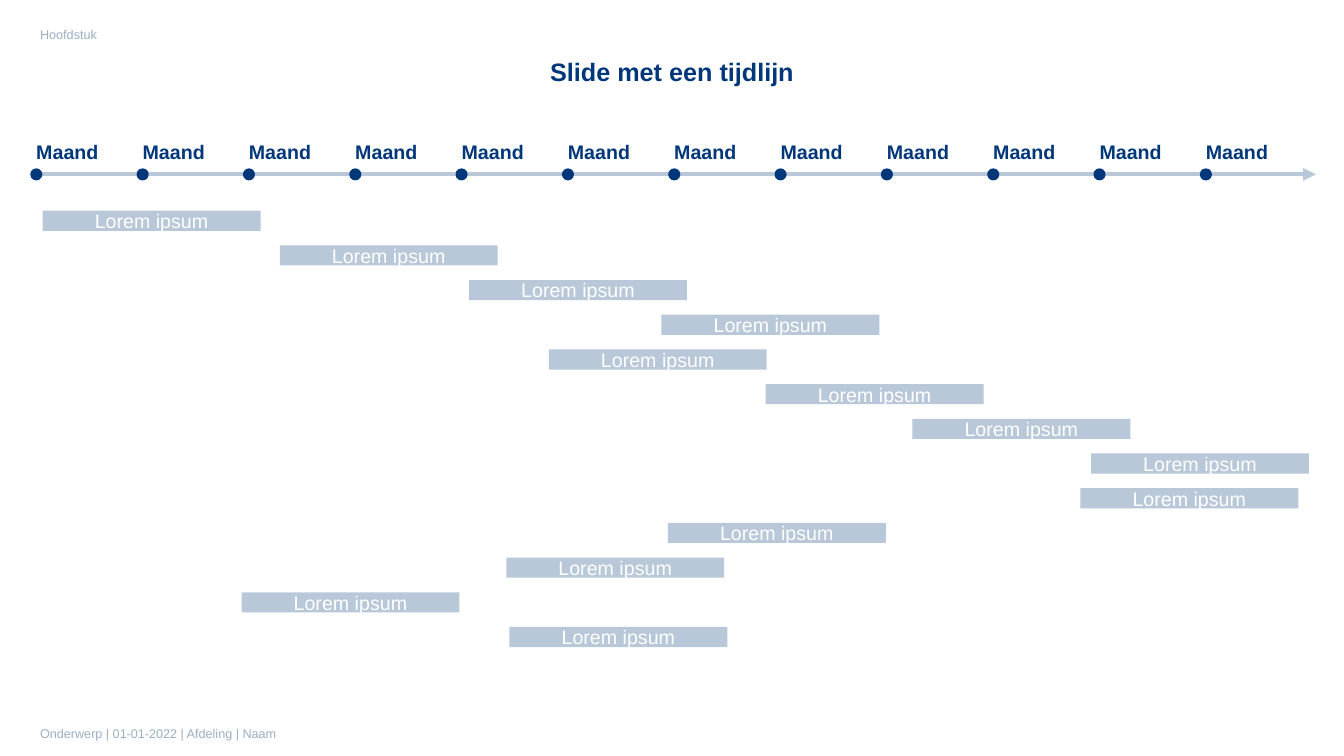
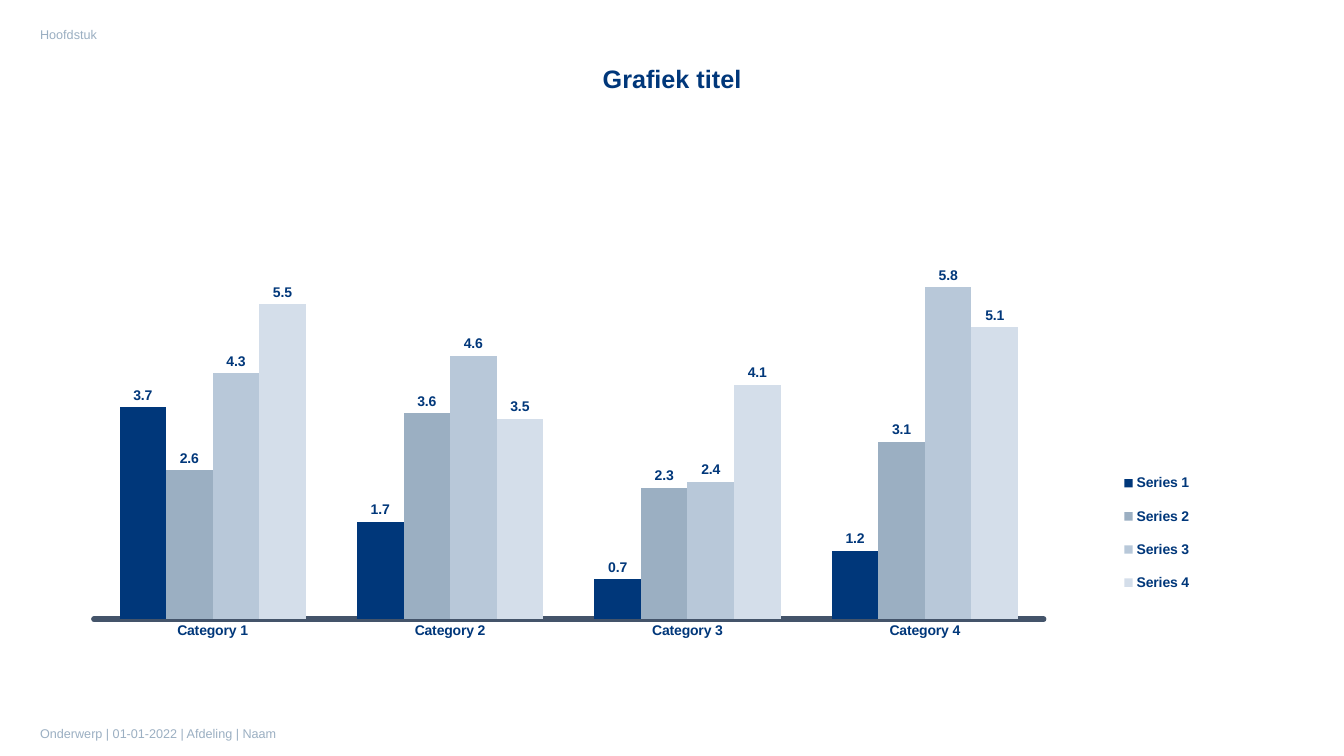
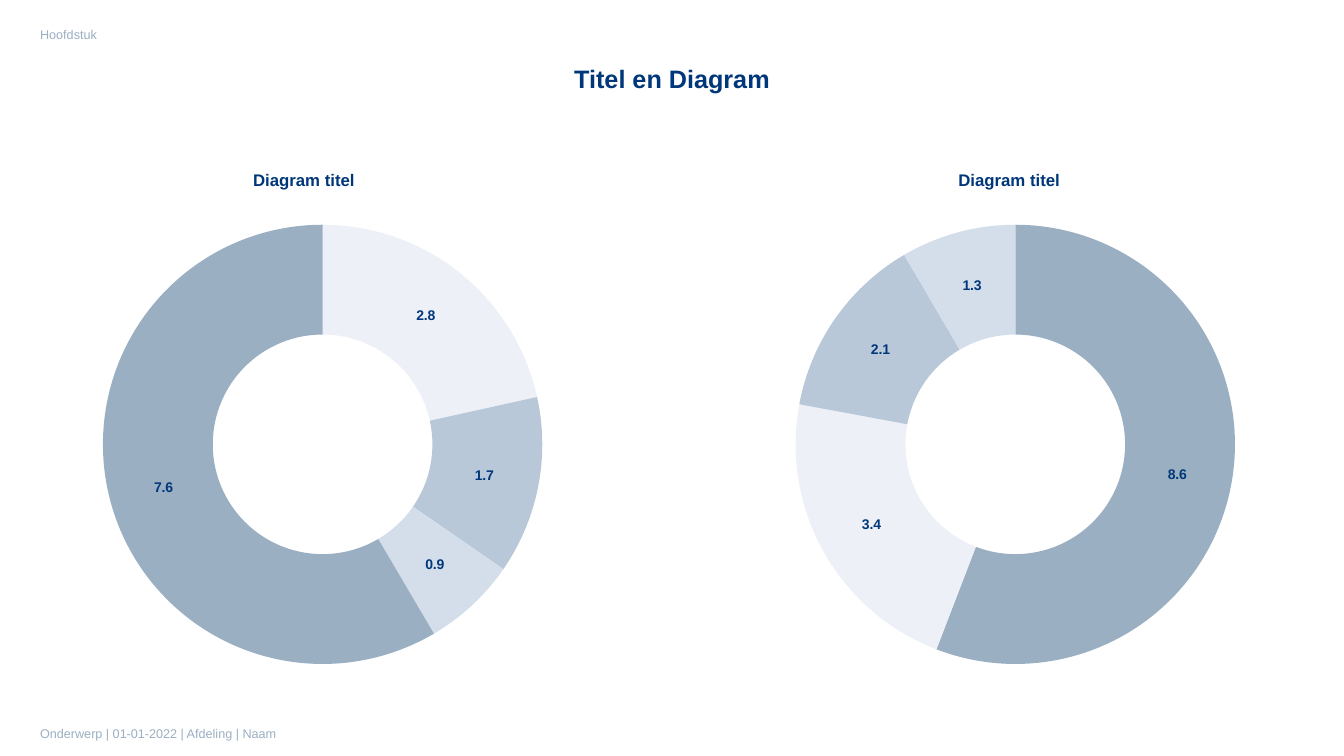
from dataclasses import dataclass

from lxml.etree import SubElement
from pptx import Presentation
from pptx.chart.chart import Chart
from pptx.chart.data import CategoryChartData
from pptx.dml.color import RGBColor
from pptx.enum.chart import XL_CHART_TYPE, XL_LABEL_POSITION, XL_LEGEND_POSITION, XL_TICK_MARK
from pptx.enum.shapes import MSO_CONNECTOR, MSO_SHAPE
from pptx.enum.text import MSO_ANCHOR, MSO_AUTO_SIZE, PP_ALIGN
from pptx.oxml.ns import qn
from pptx.slide import Slide
from pptx.util import Inches, Pt

# Shared look
WIDE, HIGH = 13.33, 7.5
FONT = "Arial"
NAVY, STEEL, MIST, PALE, ICE = "00377A", "9BAFC2", "B8C8D9", "D4DEEA", "EDF1F7"
SLATE, WHITE = "44546A", "FFFFFF"

# Timeline grid: twelve month columns, thirteen task rows
MONTHS, TASKS = 12, 13
LEFT, TOP, AXIS = 0.36, 2.09, 1.73
COL = 11.6 / (MONTHS - 1)
ROW = 4.13 / (TASKS - 1)
DOT = 0.12


@dataclass
class Box:
    x: float
    y: float
    w: float
    h: float

    def emu(self) -> list[int]:
        return [Inches(v) for v in (self.x, self.y, self.w, self.h)]


@dataclass
class Task:
    col: float
    text: str = "Lorem ipsum"
    cols: float = 2.05


@dataclass
class Ring:
    x: float
    vals: list[float]
    hues: list[str]
    head: float  # left edge of the title, as a share of the chart


STARTS = [0.06, 2.29, 4.07, 5.88, 4.82, 6.86, 8.24, 9.92, 9.82, 5.94, 4.42, 1.93, 4.45]
PLAN = [Task(col) for col in STARTS]
BARS = [
    ("Series 1", [3.7, 1.7, 0.7, 1.2], NAVY),
    ("Series 2", [2.6, 3.6, 2.3, 3.1], STEEL),
    ("Series 3", [4.3, 4.6, 2.4, 5.8], MIST),
    ("Series 4", [5.5, 3.5, 4.1, 5.1], PALE),
]
RINGS = [
    Ring(0.12, [2.8, 1.7, 0.9, 7.6], [ICE, MIST, PALE, STEEL], 0.38),
    Ring(6.99, [8.6, 3.4, 2.1, 1.3], [STEEL, ICE, MIST, PALE], 0.4),
]


def hue(code: str) -> RGBColor:
    return RGBColor.from_string(code)


def style(font, size: float, color: str = NAVY, bold: bool = True) -> None:
    font.name, font.size, font.bold = FONT, Pt(size), bold
    font.color.rgb = hue(color)


def paint(item, color: str) -> None:
    item.fill.solid()
    item.fill.fore_color.rgb = hue(color)


# Shapes and text
def shape(slide: Slide, kind: MSO_SHAPE, box: Box, color: str):
    item = slide.shapes.add_shape(kind, *box.emu())
    item.shadow.inherit = False
    paint(item, color)
    item.line.fill.background()
    return item


def write(slide: Slide, text: str, box: Box, *, size: float = 14, color: str = NAVY,
          bold: bool = False, align: PP_ALIGN = PP_ALIGN.LEFT,
          anchor: MSO_ANCHOR = MSO_ANCHOR.TOP, fill: str = "", flush: bool = False) -> None:
    if fill:
        item = shape(slide, MSO_SHAPE.RECTANGLE, box, fill)
    else:
        item = slide.shapes.add_textbox(*box.emu())
    frame = item.text_frame
    frame.word_wrap = True
    frame.vertical_anchor = anchor
    if flush:
        frame.margin_left = frame.margin_right = frame.margin_top = frame.margin_bottom = 0
    else:
        frame.auto_size = MSO_AUTO_SIZE.SHAPE_TO_FIT_TEXT
    par = frame.paragraphs[0]
    par.alignment = align
    run = par.add_run()
    run.text = text
    style(run.font, size, color, bold)


def arrow(slide: Slide, start: float, end: float, y: float) -> None:
    line = slide.shapes.add_connector(
        MSO_CONNECTOR.STRAIGHT, Inches(start), Inches(y), Inches(end), Inches(y))
    line.line.color.rgb = hue(MIST)
    line.line.width = Pt(3)
    SubElement(line.line._get_or_add_ln(), qn("a:tailEnd"), type="triangle")
    SubElement(line._element.spPr, qn("a:effectLst"))


def page(deck, title: str, top: float = 0.58) -> Slide:
    slide = deck.slides.add_slide(deck.slide_layouts[6])
    write(slide, title, Box(WIDE / 4, top, WIDE / 2, 0.4),
          size=18, bold=True, align=PP_ALIGN.CENTER)
    for text, y in (("Hoofdstuk", 0.22), ("Onderwerp | 01-01-2022 | Afdeling | Naam", 7.15)):
        write(slide, text, Box(0.3, y, 13.03, 0.25), size=9, color=STEEL)
    return slide


# Charts
def graph(slide: Slide, kind: XL_CHART_TYPE, box: Box, cats: list[str], rows) -> Chart:
    data = CategoryChartData()
    data.categories = cats
    for name, vals in rows:
        data.add_series(name, vals)
    chart = slide.shapes.add_chart(kind, *box.emu(), data).chart
    style(chart.font, 10)
    plot = chart.plots[0]
    plot.has_data_labels = True
    plot.data_labels.show_value = True
    style(plot.data_labels.font, 10)
    return chart


def place(chart: Chart, tag: str, **share: float) -> None:
    """Fix a chart part at shares of the chart's size."""
    part = chart.element.find(".//" + qn(tag))
    old = part.find(qn("c:layout"))
    if old is not None:
        part.remove(old)
    lay = SubElement(part, qn("c:layout"))
    man = SubElement(lay, qn("c:manualLayout"))
    if tag == "c:plotArea":
        SubElement(man, qn("c:layoutTarget"), val="inner")
    for axis in "xy":
        SubElement(man, qn(f"c:{axis}Mode"), val="edge")
    for key, num in share.items():
        SubElement(man, qn(f"c:{key}"), val=str(num))
    over = part.find(qn("c:overlay"))
    if over is not None:
        over.addprevious(lay)
    else:
        part.insert(0, lay)


# Slides
def months(deck) -> None:
    slide = page(deck, "Slide met een tijdlijn", 0.51)
    arrow(slide, 0.31, 13.05, AXIS)
    for num in range(MONTHS):
        x = LEFT + num * COL
        write(slide, "Maand", Box(x, 1.32, 0.73, 0.3), bold=True,
              anchor=MSO_ANCHOR.BOTTOM, flush=True)
        shape(slide, MSO_SHAPE.OVAL, Box(x - DOT / 2, AXIS - DOT / 2, DOT, DOT), NAVY)
    for num, task in enumerate(PLAN):
        box = Box(LEFT + task.col * COL, TOP + num * ROW, task.cols * COL, 0.2)
        write(slide, task.text, box, color=WHITE, fill=MIST, flush=True,
              align=PP_ALIGN.CENTER, anchor=MSO_ANCHOR.MIDDLE)


def columns(deck) -> None:
    slide = page(deck, "Grafiek titel")
    chart = graph(slide, XL_CHART_TYPE.COLUMN_CLUSTERED, Box(0.5, 1.62, 12.33, 5.13),
                  [f"Category {num}" for num in range(1, 5)],
                  [(name, vals) for name, vals, _ in BARS])
    chart.has_title = False
    plot = chart.plots[0]
    plot.gap_width, plot.overlap = 110, 0
    plot.vary_by_categories = False
    plot.data_labels.position = XL_LABEL_POSITION.OUTSIDE_END
    for row, (_, _, color) in zip(plot.series, BARS):
        paint(row.format, color)
    base = chart.category_axis
    base.major_tick_mark = base.minor_tick_mark = XL_TICK_MARK.NONE
    style(base.tick_labels.font, 10)
    base.format.line.color.rgb = hue(SLATE)
    base.format.line.width = Pt(4)
    base.format.line._get_or_add_ln().set("cap", "rnd")
    scale = chart.value_axis
    scale.minimum_scale, scale.maximum_scale = 0, 7
    scale.has_major_gridlines = False
    scale.visible = False
    chart.has_legend = True
    chart.legend.position = XL_LEGEND_POSITION.RIGHT
    chart.legend.include_in_layout = False
    style(chart.legend.font, 10)
    place(chart, "c:plotArea", x=0.035, y=0.107, w=0.764, h=0.775)
    place(chart, "c:legend", x=0.84, y=0.57, w=0.1, h=0.29)


def rings(deck) -> None:
    slide = page(deck, "Titel en Diagram")
    for ring in RINGS:
        chart = graph(slide, XL_CHART_TYPE.DOUGHNUT, Box(ring.x, 1.55, 6.21, 5.27),
                      ["1", "2", "3", "4"], [("Series 1", ring.vals)])
        chart.has_legend = False
        chart.has_title = True
        par = chart.chart_title.text_frame.paragraphs[0]
        run = par.add_run()
        run.text = "Diagram titel"
        style(run.font, 12)
        for num, color in enumerate(ring.hues):
            paint(chart.plots[0].series[0].points[num].format, color)
        chart.element.find(".//" + qn("c:holeSize")).set("val", "75")
        place(chart, "c:title", x=ring.head, y=0.02)
        place(chart, "c:plotArea", x=0.136, y=0.129, w=0.72, h=0.827)


def main() -> None:
    deck = Presentation()
    deck.slide_width, deck.slide_height = Inches(WIDE), Inches(HIGH)
    for build in (months, columns, rings):
        build(deck)
    deck.save("out.pptx")


if __name__ == "__main__":
    main()
